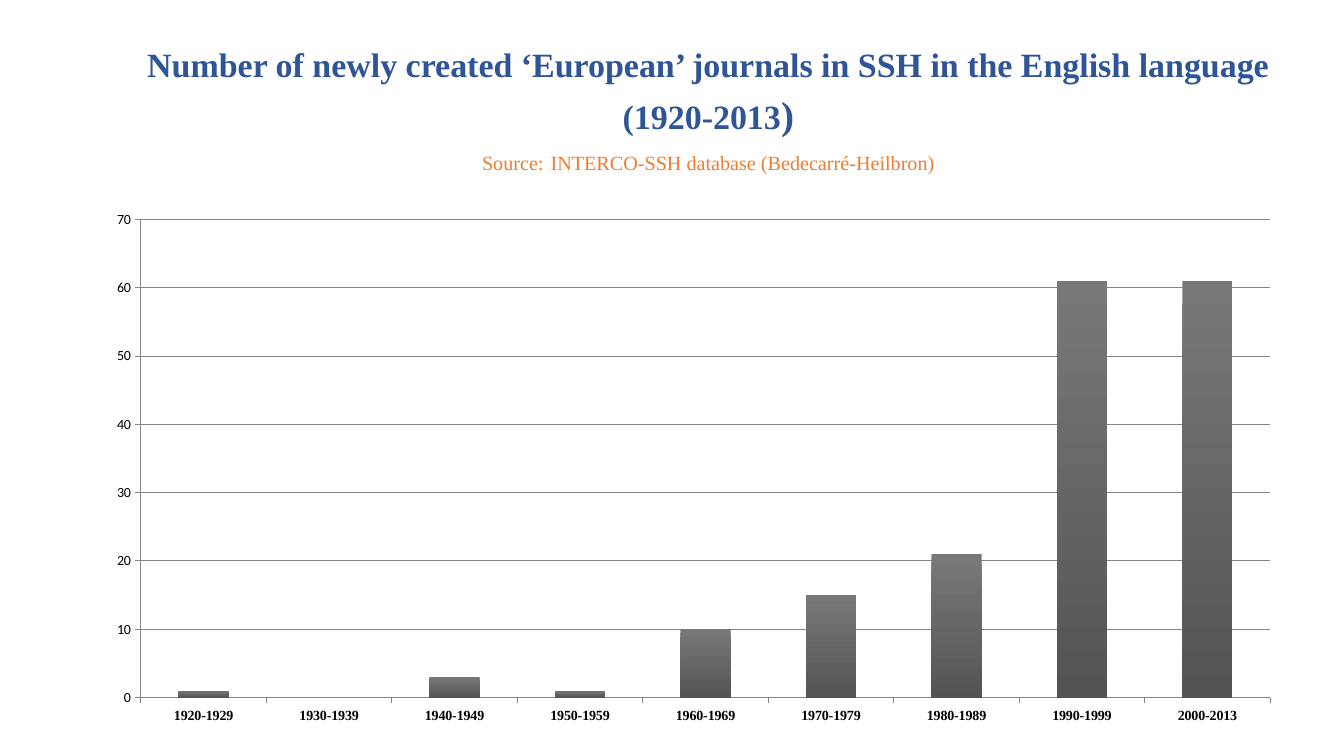
"""Build a slide with a column chart of new European SSH journals per decade."""
import pptx
import pptx.chart.data
import pptx.dml.color
import pptx.enum.chart
import pptx.enum.text
import pptx.oxml
import pptx.oxml.ns
import pptx.util

Pt = pptx.util.Pt
COLORS = {"title": "2F5597", "source": "ED7D31", "text": "000000",
          "line": "868686", "bar_top": "787878", "bar_bottom": "545454"}
SERIF = "Times New Roman"


def rgb(name):
    return pptx.dml.color.RGBColor.from_string(COLORS[name])


prs = pptx.Presentation()
prs.slide_width, prs.slide_height = Pt(960), Pt(540)
s = prs.slides.add_slide(prs.slide_layouts[6])

title_lines = [
    (32, "title", True, [("Number of newly created ‘European’ journals in SSH in the English language", 24.3)]),
    (37.8, "title", True, [("(1920-2013", 24.3), (")", 27.9)]),
    (27.7, "source", False, [("Source:", 14.4), (" ", 19.8),
                             ("INTERCO-SSH database (Bedecarré-Heilbron)", 14.4)]),
]
tf = s.shapes.add_textbox(Pt(66), Pt(28), Pt(880), Pt(98)).text_frame
tf.word_wrap = True
tf.margin_left = tf.margin_right = tf.margin_top = tf.margin_bottom = 0
for i, (spacing, color, bold, runs) in enumerate(title_lines):
    p = tf.add_paragraph() if i else tf.paragraphs[0]
    p.alignment = pptx.enum.text.PP_ALIGN.CENTER
    p.line_spacing = Pt(spacing)
    p.font.name, p.font.bold = SERIF, bold
    p.font.color.rgb = rgb(color)
    for text, size in runs:
        r = p.add_run()
        r.text, r.font.size = text, Pt(size)

data = pptx.chart.data.CategoryChartData()
data.categories = [f"{year}-{year + 9}" for year in range(1920, 2000, 10)] + ["2000-2013"]
data.add_series("Series 1", [1, 0, 3, 1, 10, 15, 21, 61, 61])
chart = s.shapes.add_chart(pptx.enum.chart.XL_CHART_TYPE.COLUMN_CLUSTERED,
                           Pt(66.24), Pt(144), Pt(858.24), Pt(380.16), data).chart
chart.has_legend = chart.has_title = False
chart.font.name, chart.font.size = "Calibri", Pt(10)
chart.font.color.rgb = rgb("text")

plot = chart.plots[0]
plot.gap_width = 150
plot.vary_by_categories = False
fill = plot.series[0].format.fill
fill.gradient()
fill.gradient_angle = 270
for stop, color, position in zip(fill.gradient_stops, ("bar_top", "bar_bottom"), (0, 1)):
    stop.color.rgb, stop.position = rgb(color), position

years, counts = chart.category_axis, chart.value_axis
years.tick_labels.font.name = SERIF
years.tick_labels.font.size = Pt(10)
years.tick_labels.font.bold = True
counts.minimum_scale, counts.maximum_scale, counts.major_unit = 0, 70, 10
counts.has_major_gridlines = True
for axis in (years, counts):
    axis.major_tick_mark = pptx.enum.chart.XL_TICK_MARK.OUTSIDE
for part in (years, counts, counts.major_gridlines):
    part.format.line.color.rgb = rgb("line")
    part.format.line.width = Pt(0.75)

plot_area = chart.element.find(".//" + pptx.oxml.ns.qn("c:plotArea"))
for old in plot_area.findall(pptx.oxml.ns.qn("c:layout")):
    plot_area.remove(old)
plot_area.insert(0, pptx.oxml.parse_xml(
    f'<c:layout {pptx.oxml.ns.nsdecls("c")}><c:manualLayout><c:layoutTarget val="inner"/>'
    '<c:xMode val="edge"/><c:yMode val="edge"/><c:x val="0.04"/><c:y val="0.034"/>'
    '<c:w val="0.94"/><c:h val="0.898"/></c:manualLayout></c:layout>'))

prs.save("out.pptx")
